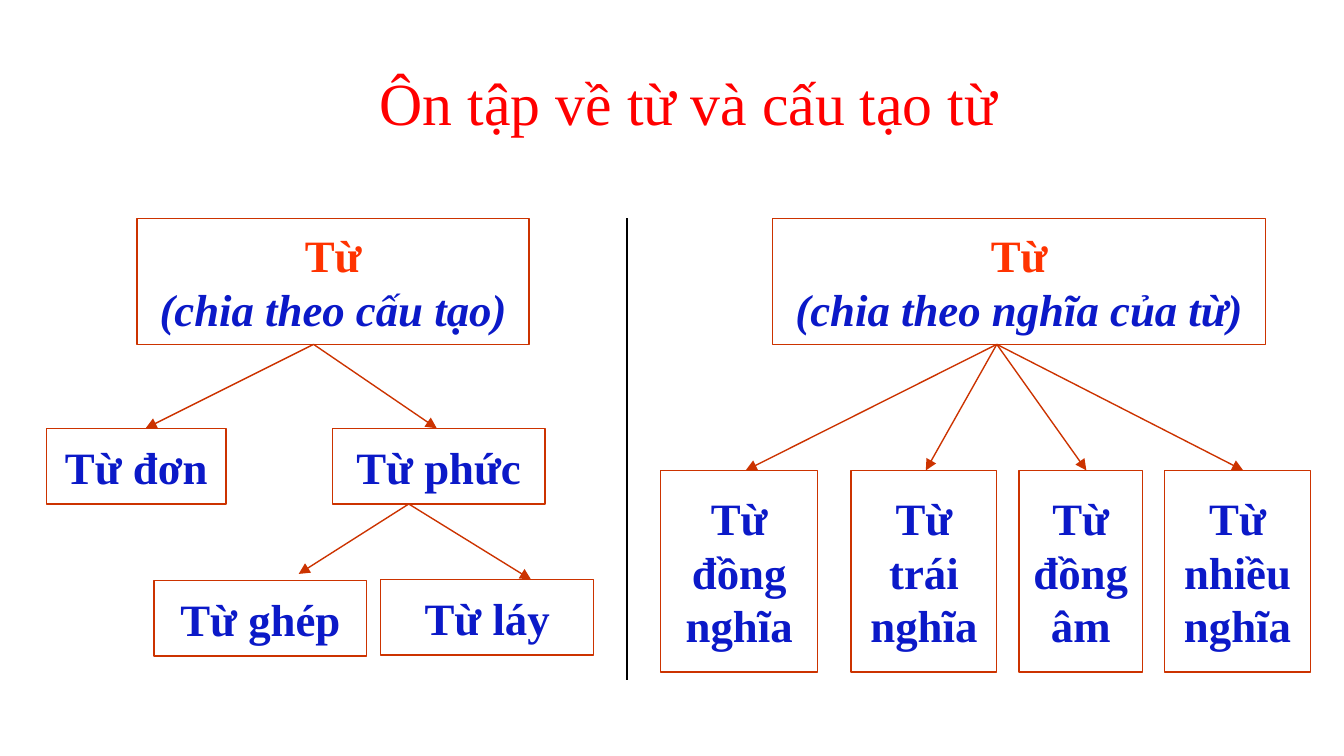
"""Build a slide reviewing Vietnamese word types as two tree diagrams."""
import pptx
import pptx.dml.color
import pptx.enum.dml
import pptx.enum.shapes
import pptx.enum.text
import pptx.oxml
import pptx.oxml.ns
import pptx.util

Pt = pptx.util.Pt
RED = pptx.dml.color.RGBColor(0xFF, 0x00, 0x00)
ORANGE = pptx.dml.color.RGBColor(0xFF, 0x33, 0x00)
BLUE = pptx.dml.color.RGBColor(0x0B, 0x19, 0xC8)
RUST = pptx.dml.color.RGBColor(0xCC, 0x33, 0x00)
BLACK = pptx.dml.color.RGBColor(0x00, 0x00, 0x00)
FONT = "Times New Roman"
CENTER = pptx.enum.text.PP_ALIGN.CENTER

HEAD_TOP, HEAD_HEIGHT = 117, 67.5
HEAD_BOTTOM = HEAD_TOP + HEAD_HEIGHT
FORM_TOP, FORM_HEIGHT = 229.5, 40.5
MEANING_TOP, MEANING_HEIGHT = 252, 108

presentation = pptx.Presentation()
presentation.slide_width = Pt(720)
presentation.slide_height = Pt(405)
slide = presentation.slides.add_slide(presentation.slide_layouts[5])


def add_box(left, top, width, height):
    box = slide.shapes.add_shape(
        pptx.enum.shapes.MSO_SHAPE.RECTANGLE, Pt(left), Pt(top), Pt(width), Pt(height)
    )
    box.shadow.inherit = False
    box.fill.background()
    box.line.color.rgb = RUST
    box.line.width = Pt(0.75)
    box.text_frame.word_wrap = True
    box.text_frame.vertical_anchor = pptx.enum.text.MSO_ANCHOR.MIDDLE
    paragraph = box.text_frame.paragraphs[0]
    paragraph.alignment = CENTER
    paragraph.font.name = FONT
    paragraph.font.size = Pt(24)
    paragraph.font.bold = True
    paragraph.font.color.rgb = BLUE
    return paragraph


def add_line(start, end, color):
    line = slide.shapes.add_connector(
        pptx.enum.shapes.MSO_CONNECTOR.STRAIGHT, *(Pt(value) for value in start + end)
    )
    line.line.color.rgb = color
    line.line.width = Pt(0.75)
    properties = line._element.spPr
    properties.append(pptx.oxml.parse_xml(f"<a:effectLst {pptx.oxml.ns.nsdecls('a')}/>"))
    return line


title = slide.shapes.title
title.left, title.top, title.width, title.height = Pt(0), Pt(31.5), Pt(720), Pt(46)
title.text_frame.text = "Ôn tập về từ và cấu tạo từ"
title.text_frame.word_wrap = True
title.text_frame.auto_size = pptx.enum.text.MSO_AUTO_SIZE.NONE
title.text_frame.vertical_anchor = pptx.enum.text.MSO_ANCHOR.TOP
title.text_frame.margin_left = Pt(25.2)
heading = title.text_frame.paragraphs[0]
heading.alignment = CENTER
heading.font.name = FONT
heading.font.size = Pt(32)
heading.font.color.rgb = RED

for left, width, criterion in [
    (73.5, 210, "(chia theo cấu tạo)"),
    (414, 264, "(chia theo nghĩa của từ)"),
]:
    root = add_box(left, HEAD_TOP, width, HEAD_HEIGHT)
    word = root.add_run()
    word.text = "Từ"
    word.font.color.rgb = ORANGE
    root.add_line_break()
    basis = root.add_run()
    basis.text = criterion
    basis.font.italic = True

for left, top, width, height, label in [
    (25, FORM_TOP, 96, FORM_HEIGHT, "Từ đơn"),
    (178, FORM_TOP, 114, FORM_HEIGHT, "Từ phức"),
    (82.5, 311, 114, FORM_HEIGHT, "Từ ghép"),
    (204, 310.5, 114, FORM_HEIGHT, "Từ láy"),
    (354, MEANING_TOP, 84, MEANING_HEIGHT, "Từ đồng nghĩa"),
    (456, MEANING_TOP, 78, MEANING_HEIGHT, "Từ trái nghĩa"),
    (546, MEANING_TOP, 66, MEANING_HEIGHT, "Từ đồng âm"),
    (624, MEANING_TOP, 78, MEANING_HEIGHT, "Từ nhiều nghĩa"),
]:
    add_box(left, top, width, height).add_run().text = label

for parent, children in [
    ((168, HEAD_BOTTOM), [(78, FORM_TOP), (234, FORM_TOP)]),
    ((219, FORM_TOP + FORM_HEIGHT), [(160, 307.5), (284.5, 310.5)]),
    ((534, HEAD_BOTTOM), [(x, MEANING_TOP) for x in (399.5, 496, 582, 666)]),
]:
    for child in children:
        arrow = add_line(parent, child, RUST)
        arrow.line._get_or_add_ln().append(
            pptx.oxml.parse_xml(f'<a:tailEnd {pptx.oxml.ns.nsdecls("a")} type="triangle"/>')
        )

add_line((336, HEAD_TOP), (336, 364.5), BLACK)

presentation.save("out.pptx")
